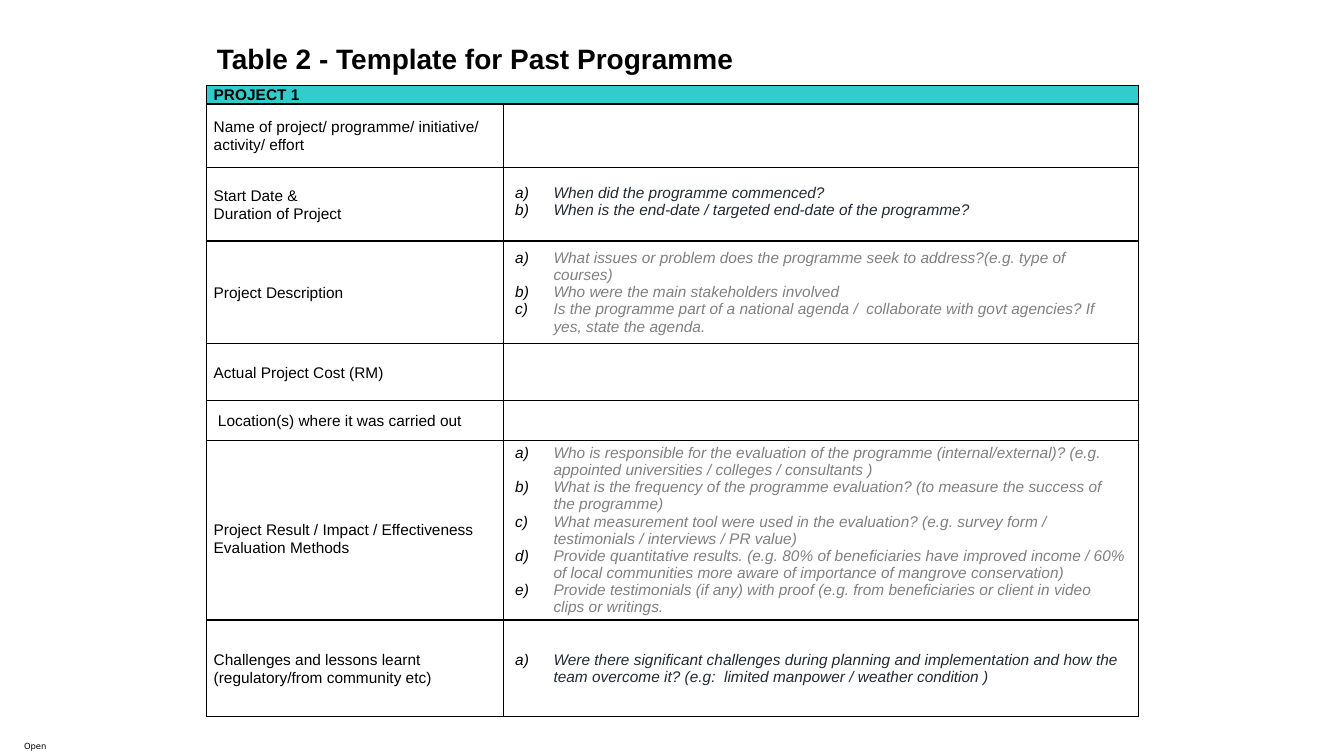
from dataclasses import dataclass

from lxml import etree
from pptx import Presentation
from pptx import util as u
from pptx.dml.color import RGBColor
from pptx.enum import text
from pptx.oxml.ns import qn


@dataclass(frozen=True)
class Theme:
    font: str = "Arial"
    footer_font: str = "DejaVu Sans"
    black: str = "000000"
    white: str = "FFFFFF"
    header: str = "33CCCC"
    navy: str = "222A35"
    grey: str = "808080"
    title_size: float = 20
    body_size: float = 11
    footer_size: float = 6
    label_spacing: float = 1.07
    label_inset: float = 0.07
    item_inset: float = 0.12
    indent: float = 0.38


THEME = Theme()
WIDTH, HEIGHT = u.Inches(13.33), u.Inches(7.5)
COLUMNS = (22.06, 47.26)  # percent of slide width
HEADER_ROW = 2.4  # percent of slide height

# Row height (percent), label lines, label top inset, items, item colour, item bottom inset
ROWS = [
    (8.4, ["Name of project/ programme/ initiative/ activity/ effort"], 0, [], None, 0),
    (9.73, ["Start Date &", "Duration of Project"], 0,
     ["When did the programme commenced?",
      "When is the end-date / targeted end-date of the programme?"], THEME.navy, 0.05),
    (13.6, ["Project Description"], 0,
     ["What issues or problem does the programme seek to address?(e.g. type of courses)",
      "Who were the main stakeholders involved",
      "Is the programme part of a national agenda /  collaborate with govt agencies? "
      "If yes, state the agenda."], THEME.grey, 0),
    (7.47, ["Actual Project Cost (RM)"], 0, [], None, 0),
    (5.33, [" Location(s) where it was carried out"], 0, [], None, 0),
    (23.73, ["Project Result / Impact / Effectiveness Evaluation Methods"], 0.17,
     ["Who is responsible for the evaluation of the programme (internal/external)? "
      "(e.g. appointed universities / colleges / consultants )",
      "What is the frequency of the programme evaluation? "
      "(to measure the success of the programme)",
      "What measurement tool were used in the evaluation? "
      "(e.g. survey form / testimonials / interviews / PR value)",
      "Provide quantitative results. (e.g. 80% of beneficiaries have improved income / "
      "60% of local communities more aware of importance of mangrove conservation)",
      "Provide testimonials (if any) with proof "
      "(e.g. from beneficiaries or client in video clips or writings."], THEME.grey, 0),
    (12.8, ["Challenges and lessons learnt (regulatory/from community etc)"], 0,
     ["Were there significant challenges during planning and implementation and how the "
      "team overcome it? (e.g:  limited manpower / weather condition )"], THEME.navy, 0),
]


def across(percent):
    return int(WIDTH * percent / 100)


def down(percent):
    return int(HEIGHT * percent / 100)


def box(left, top, width, height):
    return across(left), down(top), across(width), down(height)


def format_runs(p, size, color=THEME.black, font=THEME.font, bold=False, italic=False):
    for r in p.runs:
        r.font.size = u.Pt(size)
        r.font.name = font
        r.font.bold = bold
        r.font.italic = italic
        r.font.color.rgb = RGBColor.from_string(color)


def add_letter(p):
    """Give a paragraph a hanging a), b), c) marker."""
    pPr = p._p.get_or_add_pPr()
    indent = u.Inches(THEME.indent)
    pPr.set("marL", str(indent))
    pPr.set("indent", str(-indent))
    color = etree.SubElement(pPr, qn("a:buClr"))
    etree.SubElement(color, qn("a:srgbClr"), val=THEME.black)
    etree.SubElement(pPr, qn("a:buFont"), typeface=THEME.font)
    etree.SubElement(pPr, qn("a:buAutoNum"), type="alphaLcParenR")
    # The marker takes its weight from the paragraph end
    etree.SubElement(p._p, qn("a:endParaRPr"), sz=str(int(THEME.body_size * 100)), b="1", i="1")


def style_cell(cell, fill, inset, top=0, bottom=0):
    tcPr = cell._tc.get_or_add_tcPr()
    for side in ("a:lnL", "a:lnR", "a:lnT", "a:lnB"):
        line = etree.SubElement(tcPr, qn(side), w=str(u.Pt(1)))
        paint = etree.SubElement(line, qn("a:solidFill"))
        etree.SubElement(paint, qn("a:srgbClr"), val=THEME.black)
    cell.fill.solid()
    cell.fill.fore_color.rgb = RGBColor.from_string(fill)
    cell.margin_left = cell.margin_right = u.Inches(inset)
    cell.margin_top, cell.margin_bottom = u.Inches(top), u.Inches(bottom)
    cell.vertical_anchor = text.MSO_ANCHOR.MIDDLE


def write_label(cell, lines, bold=False):
    cell.text_frame.text = "\n".join(lines)
    for p in cell.text_frame.paragraphs:
        p.line_spacing = THEME.label_spacing
        format_runs(p, THEME.body_size, bold=bold)


def write_items(cell, items, color):
    cell.text_frame.text = "\n".join(items)
    for p in cell.text_frame.paragraphs:
        format_runs(p, THEME.body_size, color, italic=True)
        add_letter(p)


def add_title(s, title):
    sp = s.shapes.title
    sp.left, sp.top, sp.width, sp.height = box(15.38, 4.67, 69.92, 4.93)
    tf = sp.text_frame
    tf.text = title
    tf.word_wrap = True
    tf.auto_size = text.MSO_AUTO_SIZE.NONE
    tf.vertical_anchor = text.MSO_ANCHOR.TOP
    tf.margin_left = tf.margin_right = tf.margin_top = tf.margin_bottom = u.Inches(0.1)
    p = tf.paragraphs[0]
    p.alignment = text.PP_ALIGN.LEFT
    p.line_spacing = 0.9
    format_runs(p, THEME.title_size, bold=True)


def add_project_table(s, heading):
    heights = [HEADER_ROW] + [row[0] for row in ROWS]
    frame = s.shapes.add_table(len(heights), len(COLUMNS),
                               *box(15.38, 11.33, sum(COLUMNS), sum(heights)))
    table = frame.table
    table.first_row = table.horz_banding = False
    for column, share in zip(table.columns, COLUMNS):
        column.width = across(share)
    for row, share in zip(table.rows, heights):
        row.height = down(share)

    # Heading across both columns
    for cell in table.rows[0].cells:
        style_cell(cell, THEME.header, THEME.label_inset)
        cell.vertical_anchor = text.MSO_ANCHOR.TOP
    table.cell(0, 0).merge(table.cell(0, 1))
    write_label(table.cell(0, 0), [heading], bold=True)

    # Labels and their guiding questions
    for i, (_, lines, top, items, color, bottom) in enumerate(ROWS, start=1):
        label, answer = table.cell(i, 0), table.cell(i, 1)
        style_cell(label, THEME.white, THEME.label_inset, top=top)
        style_cell(answer, THEME.white, THEME.item_inset, bottom=bottom)
        write_label(label, lines)
        if items:
            write_items(answer, items, color)


def add_footer(s, words):
    tf = s.shapes.add_textbox(*box(1.05, 97.33, 3.15, 2.67)).text_frame
    tf.text = words
    tf.word_wrap = False
    tf.auto_size = text.MSO_AUTO_SIZE.SHAPE_TO_FIT_TEXT
    format_runs(tf.paragraphs[0], THEME.footer_size, font=THEME.footer_font)


def main():
    prs = Presentation()
    prs.slide_width, prs.slide_height = WIDTH, HEIGHT
    s = prs.slides.add_slide(prs.slide_layouts[5])  # Title Only
    add_title(s, "Table 2 - Template for Past Programme")
    add_project_table(s, "PROJECT 1")
    add_footer(s, "Open")
    prs.save("out.pptx")


if __name__ == "__main__":
    main()
